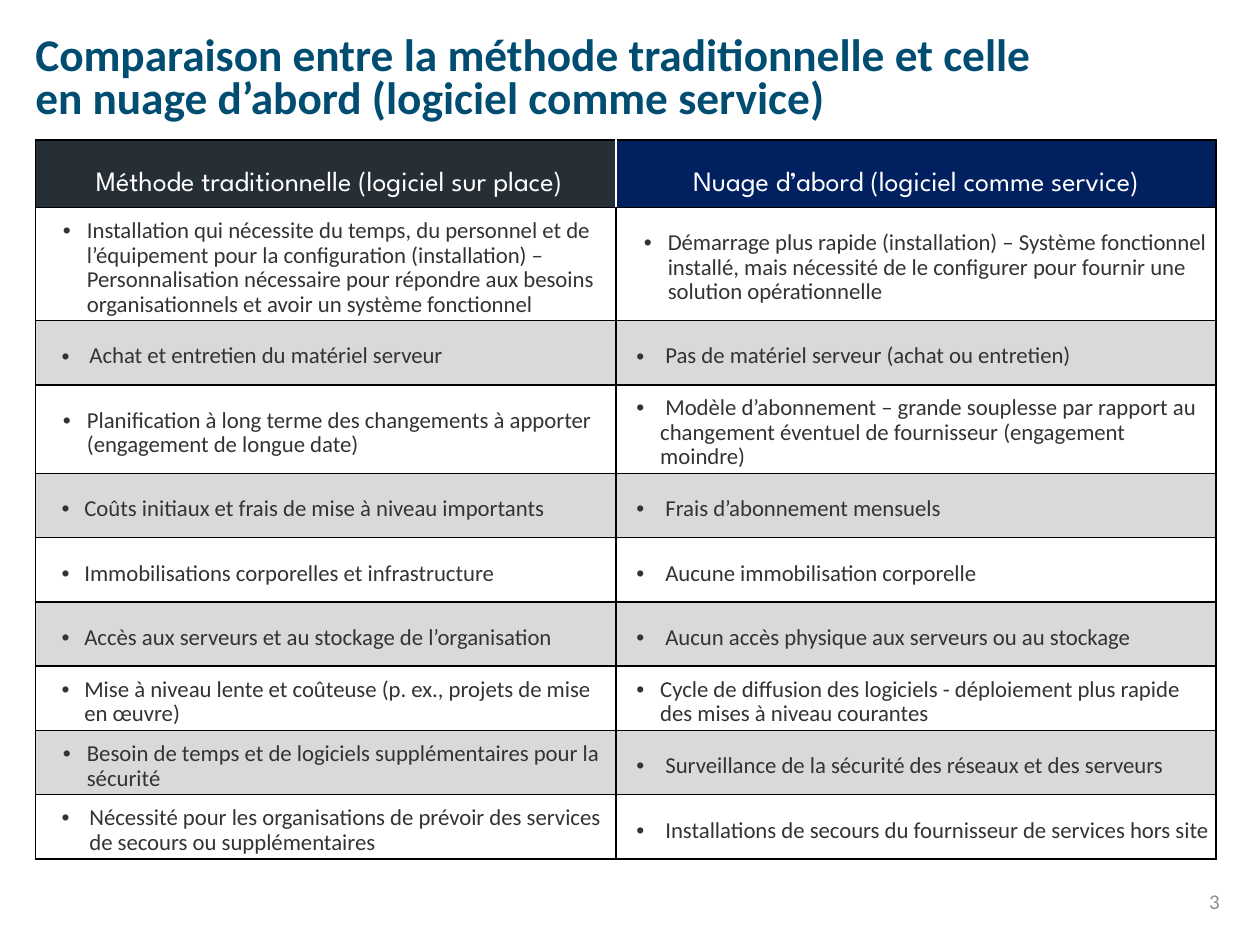
"""Build the slide comparing on-premises software with cloud-first software."""
from dataclasses import dataclass

from lxml.etree import SubElement
from pptx import Presentation
from pptx.dml.color import RGBColor
from pptx.enum.text import MSO_ANCHOR, MSO_AUTO_SIZE, PP_ALIGN
from pptx.oxml.ns import qn
from pptx.util import Pt

TEAL = RGBColor(0x00, 0x4D, 0x71)
CHARCOAL = RGBColor(0x26, 0x2E, 0x36)
NAVY = RGBColor(0x00, 0x20, 0x60)
TEXT_GRAY = RGBColor(0x33, 0x33, 0x33)
BAND_GRAY = RGBColor(0xD9, 0xD9, 0xD9)
NUMBER_GRAY = RGBColor(0x8C, 0x8C, 0x8C)
WHITE = RGBColor(0xFF, 0xFF, 0xFF)
BLACK = RGBColor(0x00, 0x00, 0x00)


@dataclass(frozen=True)
class Indent:
    left: float
    hanging: float


@dataclass(frozen=True)
class Comparison:
    traditional: str
    cloud: str
    indent: Indent


NARROW = Indent(19.44, 12.96)
MEDIUM = Indent(20.88, 13.68)
WIDE = Indent(22.32, 15.84)
WIDE_MARGINS = (8.64, 7.2, 1.44, 1.44)
EVEN_MARGINS = (4.32, 7.2, 4.32, 1.44)
HEADER_MARGINS = (2.88, 2.88, 2.88, 5.76)
COLUMN_WIDTHS = (331.92, 342.72)
ROW_HEIGHTS = (33.12, 35.28) + (36.72,) * 8
SIDES = ("L", "R", "T", "B")

HEADERS = (
    (" Méthode traditionnelle (logiciel sur place)", CHARCOAL, "R"),
    ("Nuage d’abord (logiciel comme service)", NAVY, "L"),
)
COMPARISONS = (
    Comparison(
        "Installation qui nécessite du temps, du personnel et de l’équipement pour la "
        "configuration (installation) – Personnalisation nécessaire pour répondre aux "
        "besoins organisationnels et avoir un système fonctionnel",
        "Démarrage plus rapide (installation) – Système fonctionnel installé, mais "
        "nécessité de le configurer pour fournir une solution opérationnelle",
        MEDIUM),
    Comparison("Achat et entretien du matériel serveur",
               " Pas de matériel serveur (achat ou entretien)", WIDE),
    Comparison(
        "Planification à long terme des changements à apporter (engagement de longue date)",
        " Modèle d’abonnement – grande souplesse par rapport au changement éventuel "
        "de fournisseur (engagement moindre)", MEDIUM),
    Comparison("Coûts initiaux et frais de mise à niveau importants",
               " Frais d’abonnement mensuels", NARROW),
    Comparison("Immobilisations corporelles et infrastructure",
               " Aucune immobilisation corporelle", NARROW),
    Comparison("Accès aux serveurs et au stockage de l’organisation",
               " Aucun accès physique aux serveurs ou au stockage", NARROW),
    Comparison("Mise à niveau lente et coûteuse (p. ex., projets de mise en œuvre)",
               "Cycle de diffusion des logiciels - déploiement plus rapide des mises à "
               "niveau courantes", NARROW),
    Comparison("Besoin de temps et de logiciels supplémentaires pour la sécurité",
               " Surveillance de la sécurité des réseaux et des serveurs", MEDIUM),
    Comparison("Nécessité pour les organisations de prévoir des services de secours ou "
               "supplémentaires",
               " Installations de secours du fournisseur de services hors site", WIDE),
)


def set_font(para, name: str, size: float, color: RGBColor, bold: bool = False) -> None:
    para.font.name = name
    para.font.size = Pt(size)
    para.font.bold = bold
    para.font.color.rgb = color


def style_cell(cell, margins: tuple, fill: RGBColor, white_side: str = "") -> None:
    cell.margin_left, cell.margin_top, cell.margin_right, cell.margin_bottom = map(Pt, margins)
    cell.vertical_anchor = MSO_ANCHOR.MIDDLE
    properties = cell._tc.get_or_add_tcPr()
    for side in SIDES:
        line = SubElement(properties, qn(f"a:ln{side}"), w=str(Pt(1)))
        color = WHITE if side == white_side else BLACK
        SubElement(SubElement(line, qn("a:solidFill")), qn("a:srgbClr"), val=str(color))
    cell.fill.solid()
    cell.fill.fore_color.rgb = fill


def fill_header(cell, text: str, fill: RGBColor, white_side: str) -> None:
    style_cell(cell, HEADER_MARGINS, fill, white_side)
    para = cell.text_frame.paragraphs[0]
    para.text = text
    para.alignment = PP_ALIGN.CENTER
    para.line_spacing = Pt(30)
    set_font(para, "League Spartan", 16, WHITE)


def fill_bullet(cell, text: str, margins: tuple, fill: RGBColor, indent: Indent) -> None:
    style_cell(cell, margins, fill)
    para = cell.text_frame.paragraphs[0]
    para.text = text
    para.line_spacing = Pt(14)
    properties = para._p.get_or_add_pPr()
    properties.set("marL", str(Pt(indent.left)))
    properties.set("indent", str(-Pt(indent.hanging)))
    SubElement(properties, qn("a:buFont"), typeface="Arial")
    SubElement(properties, qn("a:buChar"), char="•")
    tabs = SubElement(properties, qn("a:tabLst"))
    SubElement(tabs, qn("a:tab"), pos=str(Pt(indent.left)), algn="l")
    set_font(para, "Calibri", 13, TEXT_GRAY)


def add_title(page) -> None:
    title = page.shapes.title
    title.left, title.top, title.width, title.height = map(Pt, (20.16, 20.88, 597.6, 54))
    frame = title.text_frame
    frame.margin_left = frame.margin_top = frame.margin_right = frame.margin_bottom = 0
    frame.word_wrap = True
    frame.auto_size = MSO_AUTO_SIZE.NONE
    frame.vertical_anchor = MSO_ANCHOR.TOP
    para = frame.paragraphs[0]
    para.text = ("Comparaison entre la méthode traditionnelle et celle en nuage d’abord "
                 "(logiciel comme service)")
    para.alignment = PP_ALIGN.LEFT
    para.line_spacing = 0.8
    set_font(para, "Calibri", 25.9, TEAL, bold=True)


def add_comparison_table(page) -> None:
    table = page.shapes.add_table(
        len(ROW_HEIGHTS), len(COLUMN_WIDTHS), Pt(20.16), Pt(79.92),
        Pt(sum(COLUMN_WIDTHS)), Pt(sum(ROW_HEIGHTS))).table
    table.horz_banding = False
    for column, width in zip(table.columns, COLUMN_WIDTHS):
        column.width = Pt(width)
    for row, height in zip(table.rows, ROW_HEIGHTS):
        row.height = Pt(height)
    for column, (text, fill, white_side) in enumerate(HEADERS):
        fill_header(table.cell(0, column), text, fill, white_side)
    for row, item in enumerate(COMPARISONS, start=1):
        fill = WHITE if row % 2 else BAND_GRAY
        cloud_margins = WIDE_MARGINS if row == 1 else EVEN_MARGINS
        fill_bullet(table.cell(row, 0), item.traditional, WIDE_MARGINS, fill, item.indent)
        fill_bullet(table.cell(row, 1), item.cloud, cloud_margins, fill, MEDIUM)


def add_page_number(page) -> None:
    box = page.shapes.add_textbox(Pt(536.4), Pt(500.4), Pt(167.76), Pt(28.8))
    box.text_frame.word_wrap = True
    box.text_frame.vertical_anchor = MSO_ANCHOR.MIDDLE
    para = box.text_frame.paragraphs[0]
    para.text = "3"
    para.alignment = PP_ALIGN.RIGHT
    set_font(para, "Calibri", 12, NUMBER_GRAY)


def main() -> None:
    deck = Presentation()
    deck.slide_width, deck.slide_height = Pt(720), Pt(540)
    page = deck.slides.add_slide(deck.slide_layouts[5])
    add_title(page)
    add_comparison_table(page)
    add_page_number(page)
    deck.save("out.pptx")


if __name__ == "__main__":
    main()
